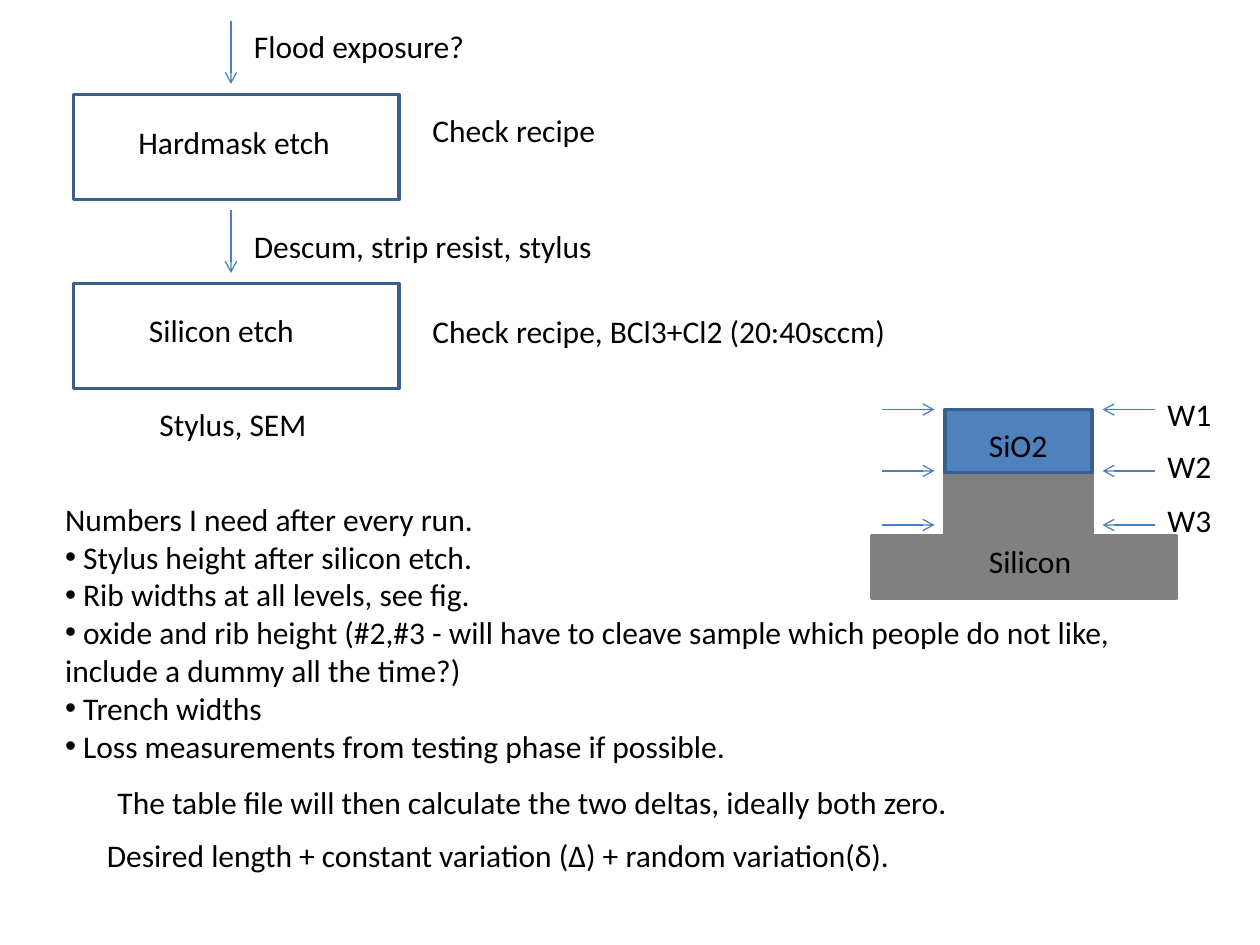
from lxml.etree import SubElement
from pptx import Presentation
from pptx.dml.color import RGBColor
from pptx.enum.shapes import MSO_CONNECTOR, MSO_SHAPE
from pptx.enum.text import MSO_ANCHOR, MSO_AUTO_SIZE
from pptx.oxml.ns import qn
from pptx.util import Inches, Pt

BLACK = RGBColor(0x00, 0x00, 0x00)
GRAY = RGBColor(0x80, 0x80, 0x80)
BLUE = RGBColor(0x4F, 0x81, 0xBD)
OUTLINE = RGBColor(0x3A, 0x5F, 0x8C)
ARROW = RGBColor(0x4B, 0x7E, 0xBC)

COLUMNS, ROWS = 120, 90  # grid of square cells, twelve to the inch
TEXT_HEIGHT = 4.8
FRAME_FORMAT = {"word_wrap": True, "vertical_anchor": MSO_ANCHOR.TOP,
                "auto_size": MSO_AUTO_SIZE.NONE}
FONT_FORMAT = {"name": "Calibri", "size": Pt(18)}

NUMBERS = [
    "Numbers I need after every run.",
    " Stylus height after silicon etch.",
    " Rib widths at all levels, see fig.",
    " oxide and rib height (#2,#3 - will have to cleave sample which people "
    "do not like, include a dummy all the time?)",
    " Trench widths",
    " Loss measurements from testing phase if possible.",
]


def cells(*counts):
    """Turn grid counts into slide lengths."""
    return [Inches(count / 12) for count in counts]


def apply(target, values):
    for name, value in values.items():
        setattr(target, name, value)


def format_text(frame):
    apply(frame, FRAME_FORMAT)
    for paragraph in frame.paragraphs:
        paragraph.space_before = Pt(0)
        for run in paragraph.runs:
            apply(run.font, FONT_FORMAT)
            run.font.color.rgb = BLACK


def add_label(slide, text, left, top, width):
    label = slide.shapes.add_textbox(*cells(left, top, width, TEXT_HEIGHT))
    label.text_frame.text = text
    format_text(label.text_frame)


def add_box(slide, kind, box, fill, line):
    shape = slide.shapes.add_shape(kind, *cells(*box))
    shape.shadow.inherit = False
    if fill is None:
        shape.fill.background()
    else:
        shape.fill.solid()
        shape.fill.fore_color.rgb = fill
    shape.line.color.rgb = line
    shape.line.width = Pt(2)


def add_arrow(slide, start, end):
    arrow = slide.shapes.add_connector(
        MSO_CONNECTOR.STRAIGHT, *cells(*start, *end))
    arrow.line.color.rgb = ARROW
    arrow.line.width = Pt(0.75)
    SubElement(arrow.line._get_or_add_ln(), qn("a:tailEnd"), type="arrow")
    SubElement(arrow._element.spPr, qn("a:effectLst"))


def add_step(slide, box, before, name, recipe):
    """Place an arrow over a process box; each label is text, dx, dy, width."""
    left, top, width, height = box
    add_arrow(slide, (left + 15, top), (left + 15, top + 6))
    add_box(slide, MSO_SHAPE.FLOWCHART_PROCESS,
            (left, top + 7, width, height - 7), None, OUTLINE)
    for text, dx, dy, label_width in (before, name, recipe):
        add_label(slide, text, left + dx, top + dy, label_width)


def add_process(slide, box):
    left, top, width, height = box
    steps = [
        (("Flood exposure?", 16, 0, 40), ("Hardmask etch", 5, 9.15, 21),
         ("Check recipe", 33, 8, 18)),
        (("Descum, strip resist, stylus", 16, 1, 40),
         ("Silicon etch", 6, 9, 19),
         ("Check recipe, BCl3+Cl2 (20:40sccm)", 33, 9.15, 47)),
    ]
    step_height = 17
    pitch = height - step_height
    for index, labels in enumerate(steps):
        add_step(slide, (left, top + index * pitch, width, step_height), *labels)
    add_label(slide, "Stylus, SEM", left + 7, top + height + 1, 19)


def add_rib_section(slide, box):
    """Draw the etched rib in cross-section with its three widths."""
    left, top, width, height = box
    layer = height / 3
    rib_left, rib_width = left + 7, 14
    layers = [
        ((left, top + 2 * layer, width, layer), GRAY, GRAY),
        ((rib_left, top + layer, rib_width, layer), GRAY, GRAY),
        ((rib_left, top, rib_width, layer), BLUE, OUTLINE),
    ]
    for place, fill, line in layers:
        add_box(slide, MSO_SHAPE.RECTANGLE, place, fill, line)
    add_label(slide, "Silicon", rib_left + 3, top + 2 * layer, 11)
    add_label(slide, "SiO2", rib_left + 3, top + 1, 11)

    gap, length = 1, 5
    rib_right = rib_left + rib_width
    widths = [("W1", 0, -2), ("W2", 5.85, 3), ("W3", 11, 8.15)]
    for text, arrow_dy, label_dy in widths:
        y = top + arrow_dy
        add_arrow(slide, (rib_left - gap - length, y), (rib_left - gap, y))
        outer = rib_right + gap + length
        add_arrow(slide, (outer, y), (rib_right + gap, y))
        add_label(slide, text, outer, top + label_dy, 7)


def add_numbers(slide, box):
    """Fill the body placeholder with a lead line and its bullets."""
    body = slide.placeholders[1]
    body.left, body.top, body.width, body.height = cells(*box)
    frame = body.text_frame
    frame.text = "\n".join(NUMBERS)
    format_text(frame)
    for index, paragraph in enumerate(frame.paragraphs):
        properties = paragraph._p.get_or_add_pPr()
        properties.set("marL", "0")
        properties.set("indent", "0")
        if index == 0:
            SubElement(properties, qn("a:buNone"))
        else:
            SubElement(properties, qn("a:buFont"), typeface="Arial")
            SubElement(properties, qn("a:buChar"), char="•")


def add_closing(slide, box):
    left, top, width, _ = box
    add_label(slide, "The table file will then calculate the two deltas, "
              "ideally both zero.", left + 1, top, width)
    add_label(slide, "Desired length + constant variation (Δ) + "
              "random variation(δ).", left, top + 5, width - 1)


def main():
    presentation = Presentation()
    presentation.slide_width, presentation.slide_height = cells(COLUMNS, ROWS)
    slide = presentation.slides.add_slide(presentation.slide_layouts[1])
    title = slide.shapes.title._element
    title.getparent().remove(title)

    add_process(slide, (7, 2, 31, 35))
    add_numbers(slide, (5, 47, 104, 26.6))
    add_rib_section(slide, (83, 39, 29, 18))
    add_closing(slide, (9, 74, 94, 10))
    presentation.save("out.pptx")


if __name__ == "__main__":
    main()
